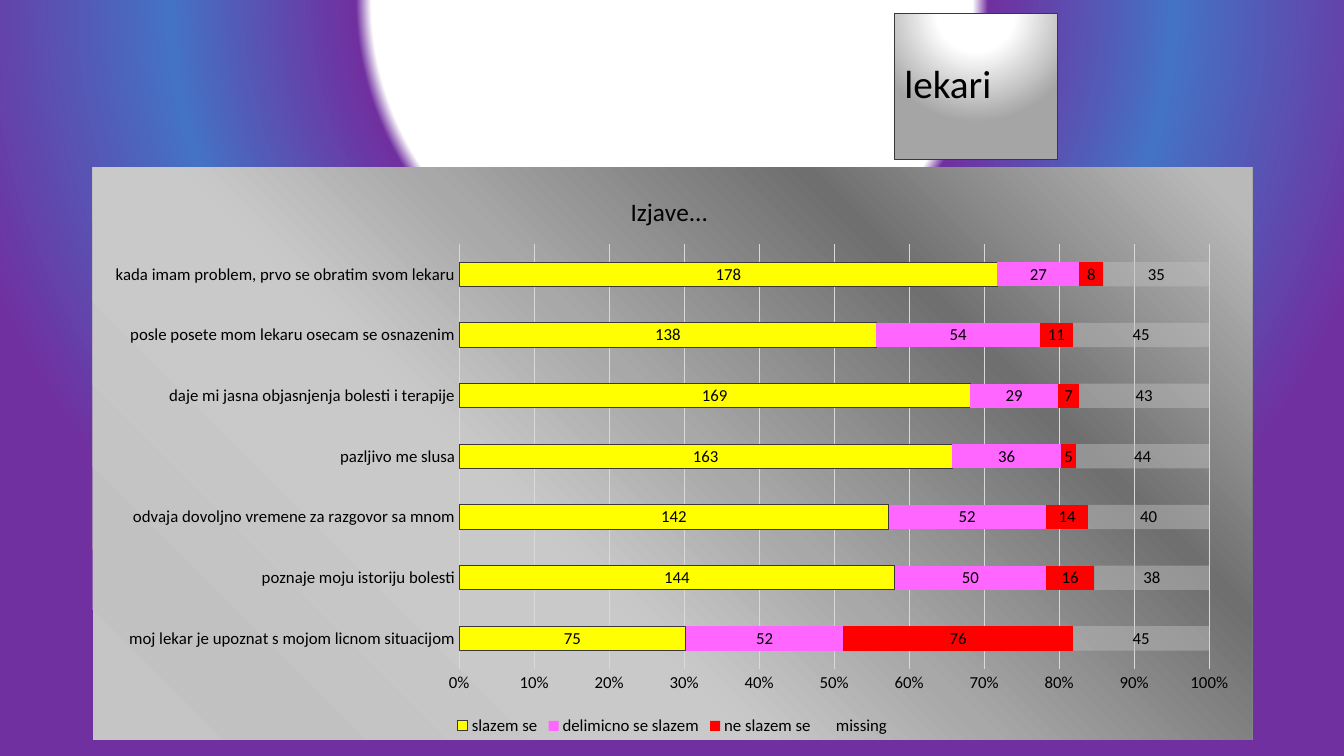
import pptx
import pptx.chart.data
import pptx.dml.color
import pptx.enum.chart
import pptx.enum.text
import pptx.oxml
import pptx.oxml.ns
import pptx.util

RGB = pptx.dml.color.RGBColor
BLACK = RGB(0x00, 0x00, 0x00)
WHITE = RGB(0xFF, 0xFF, 0xFF)
PURPLE = RGB(0x70, 0x30, 0xA0)
BLUE = RGB(0x44, 0x72, 0xC4)
GRAY = RGB(0xA5, 0xA5, 0xA5)
CHARCOAL = RGB(0x3B, 0x38, 0x38)
GRID_GRAY = RGB(0xD9, 0xD9, 0xD9)
YELLOW = RGB(0xFF, 0xFF, 0x00)
PINK = RGB(0xFF, 0x66, 0xFF)
RED = RGB(0xFF, 0x00, 0x00)
SILVER = RGB(0xBF, 0xBF, 0xBF)

FONT = "Calibri"
HAIRLINE = pptx.util.Pt(0.75)
WIDTH, HEIGHT = pptx.util.Inches(13.33), pptx.util.Inches(7.5)
TOP_GLOW = (50, -80, 50, 180)
CORNER_GLOW = (100, 0, 0, 100)
BACKGROUND_STOPS = [(39, WHITE), (41, PURPLE), (65, BLUE), (96, PURPLE)]
TITLE_STOPS = [(0, WHITE), (35, WHITE), (100, GRAY)]
PANEL_STOPS = [(share, RGB(level, level, level)) for share, level in (
    (3, 0xB9), (26, 0x6F), (48, 0xA8), (61, 0xC7),
    (62, 0xC8), (70, 0xC9), (89, 0xC1), (96, 0xC5))]

STATEMENTS = [
    "moj lekar je upoznat s mojom licnom situacijom",
    "poznaje moju istoriju bolesti",
    "odvaja dovoljno vremene za razgovor sa mnom",
    "pazljivo me slusa",
    "daje mi jasna objasnjenja bolesti i terapije",
    "posle posete mom lekaru osecam se osnazenim",
    "kada imam problem, prvo se obratim svom lekaru",
]
ANSWERS = [
    ("slazem se", YELLOW, (75, 144, 142, 163, 169, 138, 178)),
    ("delimicno se slazem", PINK, (52, 50, 52, 36, 29, 54, 27)),
    ("ne slazem se", RED, (76, 16, 14, 5, 7, 11, 8)),
    ("missing", SILVER, (45, 38, 40, 44, 43, 45, 35)),
]


def box(left, top, width, height):
    """Turn shares of the slide into a box in slide units."""
    return (int(WIDTH * left), int(HEIGHT * top),
            int(WIDTH * width), int(HEIGHT * height))


def gradient(stops, focus):
    """Build a circular gradient fill from percent stops and a focus rectangle."""
    stop_xml = "".join(
        f'<a:gs pos="{share * 1000}"><a:srgbClr val="{color}"/></a:gs>'
        for share, color in stops)
    left, top, right, bottom = (edge * 1000 for edge in focus)
    return pptx.oxml.parse_xml(
        f'<a:gradFill {pptx.oxml.ns.nsdecls("a")} rotWithShape="1">'
        f'<a:gsLst>{stop_xml}</a:gsLst><a:path path="circle">'
        f'<a:fillToRect l="{left}" t="{top}" r="{right}" b="{bottom}"/>'
        '</a:path></a:gradFill>')


def set_gradient(fill, properties, stops, focus):
    """Give a fill a circular gradient."""
    fill.solid()
    solid = properties.find(pptx.oxml.ns.qn("a:solidFill"))
    properties.replace(solid, gradient(stops, focus))


def format_font(font, size, color=BLACK):
    """Set face, size and colour of a font."""
    font.name, font.size, font.bold = FONT, pptx.util.Pt(size), False
    font.color.rgb = color


def write_text(frame, text, size, color=BLACK, align=None, spacing=None):
    """Write one formatted paragraph."""
    paragraph = frame.paragraphs[0]
    paragraph.alignment, paragraph.line_spacing = align, spacing
    run = paragraph.add_run()
    run.text = text
    format_font(run.font, size, color)


def manual_layout(x, y, size=None):
    """Build a chart layout from shares of the chart area."""
    edges = [("xMode", "edge"), ("yMode", "edge"), ("x", x), ("y", y)]
    if size:
        edges = [("layoutTarget", "inner"), *edges, ("w", size[0]), ("h", size[1])]
    body = "".join(f'<c:{tag} val="{value}"/>' for tag, value in edges)
    return pptx.oxml.parse_xml(
        f'<c:layout {pptx.oxml.ns.nsdecls("c")}>'
        f'<c:manualLayout>{body}</c:manualLayout></c:layout>')


def place_layout(parent, layout, before=None):
    """Put a layout in a chart part, after the named child or first."""
    for old in parent.findall(pptx.oxml.ns.qn("c:layout")):
        parent.remove(old)
    if before is None:
        parent.insert(0, layout)
    else:
        parent.find(pptx.oxml.ns.qn(before)).addnext(layout)


def paint_background(slide):
    """Paint the slide background."""
    fill = slide.background.fill
    fill.solid()
    properties = slide.element.find(".//" + pptx.oxml.ns.qn("p:bgPr"))
    set_gradient(fill, properties, BACKGROUND_STOPS, TOP_GLOW)


def add_heading(slide, left, top, width, height):
    """Place the title tile in its box."""
    heading = slide.shapes.title
    heading.left, heading.top, heading.width, heading.height = left, top, width, height
    set_gradient(heading.fill, heading.element.spPr, TITLE_STOPS, TOP_GLOW)
    heading.line.color.rgb, heading.line.width = CHARCOAL, HAIRLINE
    heading.text_frame.vertical_anchor = pptx.enum.text.MSO_ANCHOR.MIDDLE
    write_text(heading.text_frame, "lekari", 28,
               align=pptx.enum.text.PP_ALIGN.LEFT, spacing=0.9)


def format_axes(chart):
    """Format both axes and the gridlines."""
    for axis in (chart.category_axis, chart.value_axis):
        axis.major_tick_mark = axis.minor_tick_mark = pptx.enum.chart.XL_TICK_MARK.NONE
        format_font(axis.tick_labels.font, 12)
    statement_line = chart.category_axis.format.line
    grid_line = chart.value_axis.major_gridlines.format.line
    for line in (statement_line, grid_line):
        line.color.rgb, line.width = GRID_GRAY, HAIRLINE
    chart.value_axis.format.line.fill.background()
    chart.value_axis.tick_labels.number_format = "0%"
    chart.value_axis.tick_labels.number_format_is_linked = False


def format_answers(plot):
    """Colour and label the bars of each answer."""
    plot.gap_width, plot.overlap, plot.vary_by_categories = 150, 100, False
    for answer, (_, color, _) in zip(plot.series, ANSWERS):
        answer.format.fill.solid()
        answer.format.fill.fore_color.rgb = color
        labels = answer.data_labels
        labels.show_value = True
        labels.position = pptx.enum.chart.XL_LABEL_POSITION.CENTER
        format_font(labels.font, 12)
    agree, missing = plot.series[0], plot.series[-1]
    agree.format.line.color.rgb, agree.format.line.width = CHARCOAL, HAIRLINE
    tint = missing.format.fill._xPr.find(".//" + pptx.oxml.ns.qn("a:srgbClr"))
    tint.append(pptx.oxml.parse_xml(
        f'<a:alpha {pptx.oxml.ns.nsdecls("a")} val="47000"/>'))


def add_answers_chart(slide, left, top, width, height):
    """Place the chart of answers in its box."""
    data = pptx.chart.data.CategoryChartData()
    data.categories = STATEMENTS
    for name, _, values in ANSWERS:
        data.add_series(name, values)
    chart = slide.shapes.add_chart(
        pptx.enum.chart.XL_CHART_TYPE.BAR_STACKED_100,
        left, top, width, height, data).chart
    format_font(chart.font, 10)
    write_text(chart.chart_title.text_frame, "Izjave...", 18)
    chart.has_legend = True
    chart.legend.position = pptx.enum.chart.XL_LEGEND_POSITION.BOTTOM
    chart.legend.include_in_layout = False
    format_font(chart.legend.font, 12)
    format_axes(chart)
    format_answers(chart.plots[0])

    chart_part = chart.element.find(pptx.oxml.ns.qn("c:chart"))
    place_layout(chart_part.find(pptx.oxml.ns.qn("c:title")),
                 manual_layout(0.46, 0.04), "c:tx")
    place_layout(chart_part.find(pptx.oxml.ns.qn("c:plotArea")),
                 manual_layout(0.316, 0.134, (0.647, 0.742)))
    panel = pptx.oxml.parse_xml(f'<c:spPr {pptx.oxml.ns.nsdecls("c", "a")}/>')
    panel.append(gradient(PANEL_STOPS, CORNER_GLOW))
    panel.append(pptx.oxml.parse_xml(
        f'<a:ln {pptx.oxml.ns.nsdecls("a")}><a:noFill/></a:ln>'))
    chart_part.addnext(panel)


def main():
    """Build and save the presentation."""
    deck = pptx.Presentation()
    deck.slide_width, deck.slide_height = WIDTH, HEIGHT
    slide = deck.slides.add_slide(deck.slide_layouts[5])
    paint_background(slide)
    add_heading(slide, *box(0.6654, 0.0173, 0.1215, 0.1933))
    add_answers_chart(slide, *box(0.069, 0.2213, 0.8627, 0.7573))
    deck.save("out.pptx")


if __name__ == "__main__":
    main()
